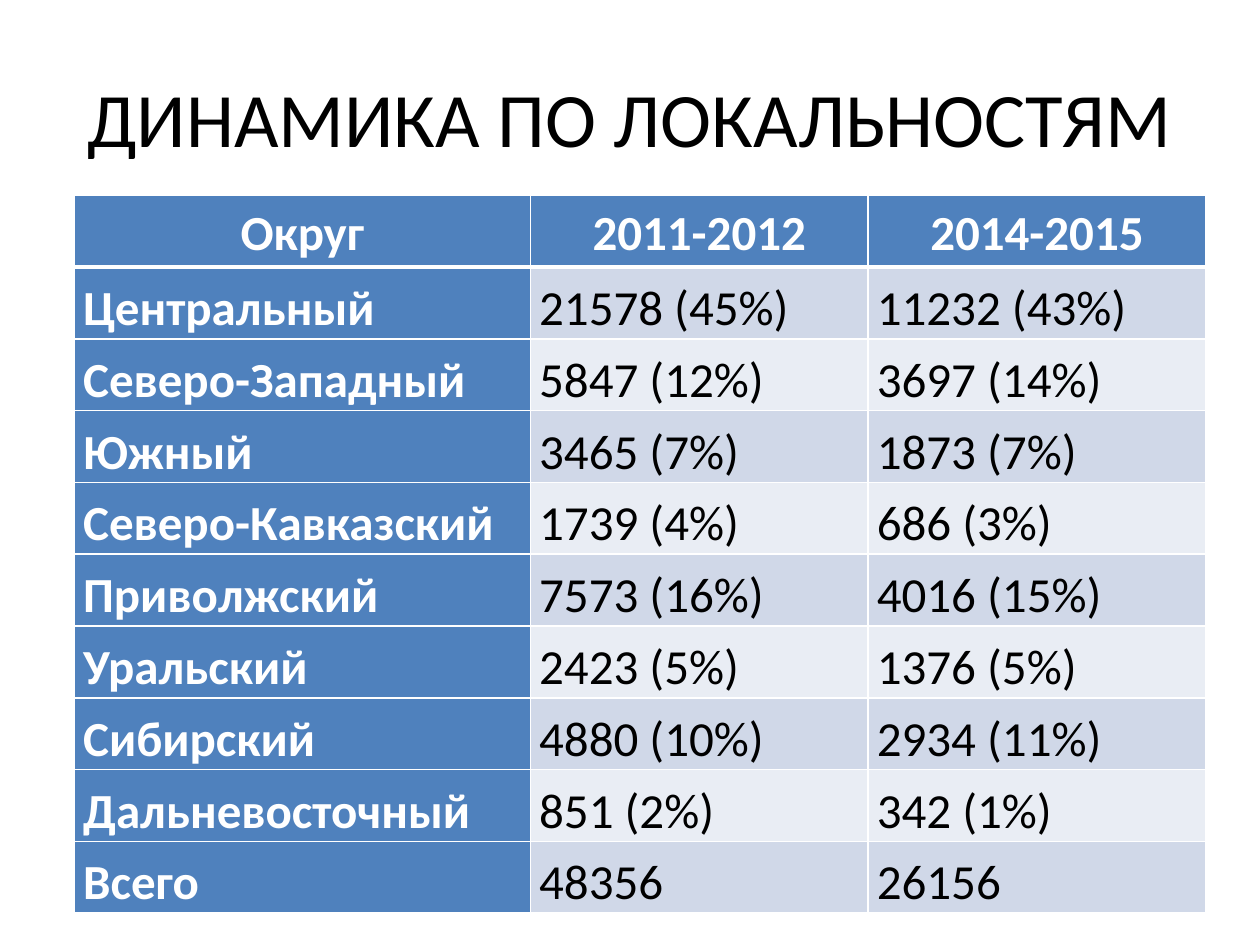
from lxml.etree import SubElement
from pptx import Presentation
from pptx.dml.color import RGBColor
from pptx.enum.text import MSO_ANCHOR as ANCHOR, PP_ALIGN as ALIGN
from pptx.oxml.ns import qn
from pptx.util import Inches, Pt

FONT = "Calibri"
WHITE, BLACK, BLUE = "FFFFFF", "000000", "4F81BD"
BANDS = ("D0D8E8", "E9EDF4")
COL_WIDTHS = (3.62, 2.68, 2.68)
ROW_HEIGHT = 0.57
ROWS = [
    ("Округ", "2011-2012", "2014-2015"),
    ("Центральный", "21578 (45%)", "11232 (43%)"),
    ("Северо-Западный", "5847 (12%)", "3697 (14%)"),
    ("Южный", "3465 (7%)", "1873 (7%)"),
    ("Северо-Кавказский", "1739 (4%)", "686 (3%)"),
    ("Приволжский", "7573 (16%)", "4016 (15%)"),
    ("Уральский", "2423 (5%)", "1376 (5%)"),
    ("Сибирский", "4880 (10%)", "2934 (11%)"),
    ("Дальневосточный", "851 (2%)", "342 (1%)"),
    ("Всего", "48356", "26156"),
]


def rgb(color):
    return RGBColor.from_string(color)


def write(tf, text, size, color, align, bold=False):
    tf.text = text
    p = tf.paragraphs[0]
    p.alignment = align
    font = p.runs[0].font
    font.name, font.size, font.bold = FONT, Pt(size), bold
    font.color.rgb = rgb(color)
    return p


def add_title(s, text):
    tf = s.shapes.add_textbox(Inches(0.5), Inches(0.3), Inches(9), Inches(1.25)).text_frame
    tf.word_wrap = True
    tf.vertical_anchor = ANCHOR.MIDDLE
    write(tf, text, 44, BLACK, ALIGN.CENTER)


def set_borders(cell, **widths):
    tc_pr = cell._tc.get_or_add_tcPr()
    for side in "LRTB":
        ln = SubElement(tc_pr, qn(f"a:ln{side}"), w=str(Pt(widths.get(side, 1))))
        fill = SubElement(ln, qn("a:solidFill"))
        SubElement(fill, qn("a:srgbClr"), val=WHITE)


def style_cell(cell, text, row, col):
    header = row == 0
    label = header or col == 0
    cell.margin_left = cell.margin_right = Inches(0.07)
    cell.margin_top = cell.margin_bottom = 0
    cell.vertical_anchor = ANCHOR.TOP if header else ANCHOR.BOTTOM
    set_borders(cell, T=3 if row == 1 else 1, B=3 if header else 1)
    cell.fill.solid()
    cell.fill.fore_color.rgb = rgb(BLUE if label else BANDS[(row - 1) % 2])
    p = write(cell.text_frame, text, 28, WHITE if label else BLACK,
              ALIGN.CENTER if header else ALIGN.JUSTIFY, label)
    p.line_spacing = 1.15


def add_district_table(s):
    table = s.shapes.add_table(
        len(ROWS), len(COL_WIDTHS), Inches(0.59), Inches(1.55),
        Inches(sum(COL_WIDTHS)), Inches(ROW_HEIGHT * len(ROWS))).table
    table.first_col = True
    for column, width in zip(table.columns, COL_WIDTHS):
        column.width = Inches(width)
    for i, values in enumerate(ROWS):
        table.rows[i].height = Inches(ROW_HEIGHT)
        for j, text in enumerate(values):
            style_cell(table.cell(i, j), text, i, j)


def main():
    prs = Presentation()
    prs.slide_width, prs.slide_height = Inches(10), Inches(7.5)
    s = prs.slides.add_slide(prs.slide_layouts[6])
    add_title(s, "ДИНАМИКА ПО ЛОКАЛЬНОСТЯМ")
    add_district_table(s)
    prs.save("out.pptx")


if __name__ == "__main__":
    main()
